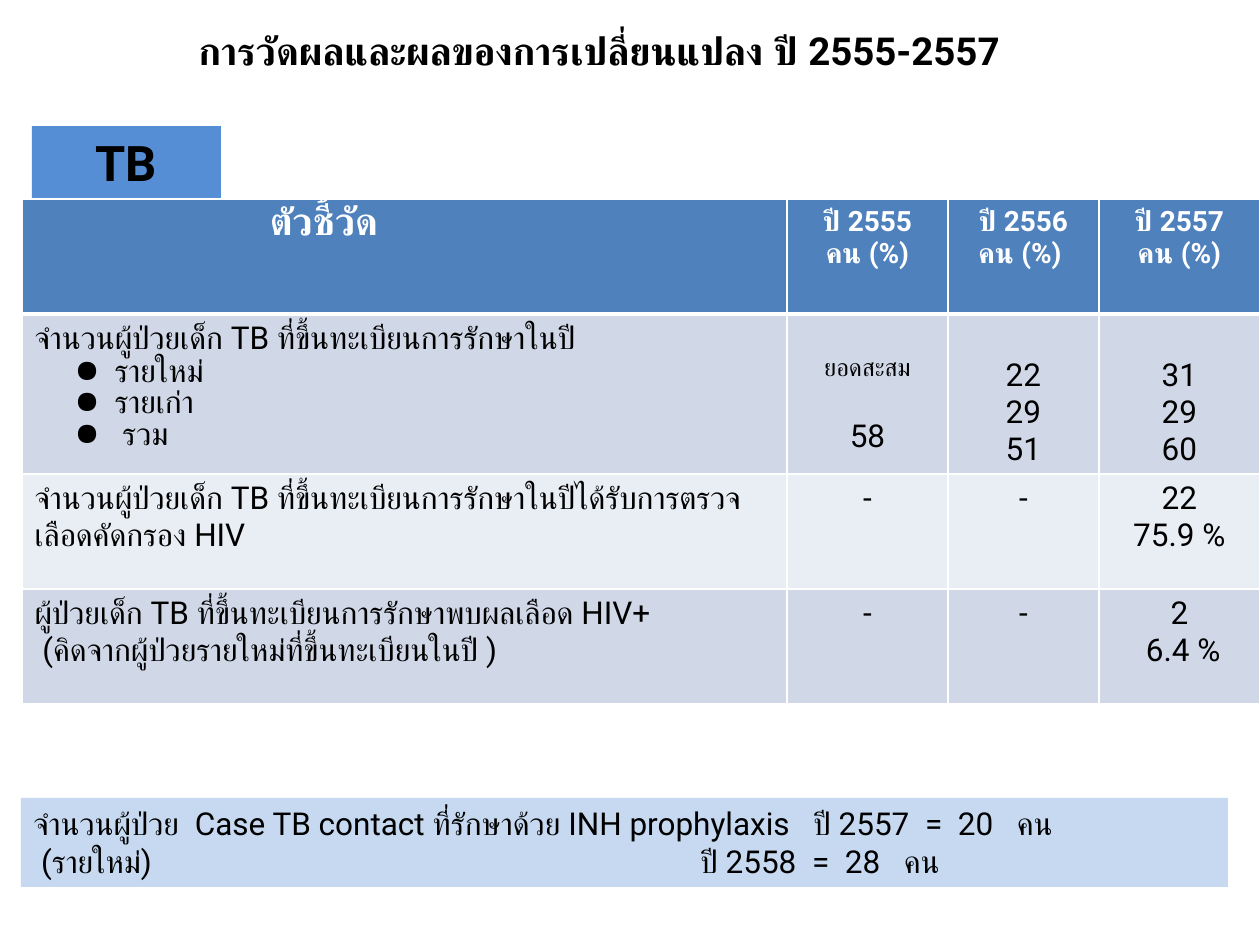
from lxml import etree
from pptx import Presentation
from pptx import util as u
from pptx.dml.color import RGBColor
from pptx.enum import shapes, text
from pptx.oxml import ns

SCALE = 914400 / 126
FONT = "Roboto"
COLORS = {
    "ink": "000000", "white": "FFFFFF", "header": "4F81BD",
    "odd": "D0D8E8", "even": "E9EDF4", "tag": "558ED5", "note": "C6D9F1",
}
COLUMNS = [765, 161, 151, 161]
ROWS = [115, 160, 115, 115]
LINE = 37
PAD = 6
CELLS = [
    ["ตัวชี้วัด", "ปี 2555\nคน (%)", "ปี 2556\nคน (%) ", "ปี 2557\nคน (%)"],
    ["จำนวนผู้ป่วยเด็ก TB ที่ขึ้นทะเบียนการรักษาในปี\nรายใหม่\nรายเก่า\n รวม",
     "ยอดสะสม\n58", "22\n29\n51", "31\n29\n60"],
    ["จำนวนผู้ป่วยเด็ก TB ที่ขึ้นทะเบียนการรักษาในปีได้รับการตรวจเลือดคัดกรอง HIV",
     "-", "-", "22\n75.9 %"],
    ["ผู้ป่วยเด็ก TB ที่ขึ้นทะเบียนการรักษาพบผลเลือด HIV+\n"
     " (คิดจากผู้ป่วยรายใหม่ที่ขึ้นทะเบียนในปี )", "-", "-", "2\n 6.4 %"],
]


def px(length):
    """Turn pixels into EMU."""
    return u.Emu(round(length * SCALE))


def color(name):
    """Look up a colour by name."""
    return RGBColor.from_string(COLORS[name])


def paint(item, name):
    """Give a shape or cell a solid fill."""
    item.fill.solid()
    item.fill.fore_color.rgb = color(name)


def write(frame, words, size, ink="ink", bold=False, align=text.PP_ALIGN.CENTER):
    """Set the text of a frame and format its paragraphs and runs."""
    frame.text = words
    frame.word_wrap = True
    for para in frame.paragraphs:
        para.alignment = align
        for span in para.runs:
            span.font.name = FONT
            span.font.size = u.Pt(size)
            span.font.bold = bold
            span.font.color.rgb = color(ink)


def add_title(page, words):
    """Fill and place the title placeholder."""
    box = page.shapes.title
    box.left, box.top, box.width, box.height = map(px, (32, 21, 1134, 84))
    write(box.text_frame, words, 22, bold=True)
    box.text_frame.vertical_anchor = text.MSO_ANCHOR.TOP


def add_box(page, place, fill, words, size, **style):
    """Add a filled rectangle with text."""
    box = page.shapes.add_shape(shapes.MSO_SHAPE.RECTANGLE, *map(px, place))
    box.shadow.inherit = False
    box.line.fill.background()
    paint(box, fill)
    write(box.text_frame, words, size, **style)
    box.text_frame.vertical_anchor = text.MSO_ANCHOR.TOP
    return box


def add_tab(para, position):
    """Set one left tab stop on a paragraph."""
    stops = etree.SubElement(para._p.get_or_add_pPr(), ns.qn("a:tabLst"))
    etree.SubElement(stops, ns.qn("a:tab"), pos=str(px(position)), algn="l")


def add_bullet(para):
    """Give a paragraph a round bullet with a hanging indent."""
    props = para._p.get_or_add_pPr()
    props.set("marL", str(px(80)))
    props.set("indent", str(px(-40)))
    etree.SubElement(props, ns.qn("a:buChar"), char="●")


def add_borders(cell, bottom):
    """Draw white lines around a cell."""
    props = cell._tc.get_or_add_tcPr()
    for side, points in (("L", 1), ("R", 1), ("T", 1), ("B", bottom)):
        line = etree.SubElement(props, ns.qn(f"a:ln{side}"), w=str(u.Pt(points)))
        fill = etree.SubElement(line, ns.qn("a:solidFill"))
        etree.SubElement(fill, ns.qn("a:srgbClr"), val=COLORS["white"])


def fill_cell(cell, words, row, column):
    """Write and format one table cell."""
    header = row == 0
    add_borders(cell, 3 if header else 1)
    paint(cell, "header" if header else "odd" if row % 2 else "even")
    size = 18 if not header else 16 if column else 22
    align = text.PP_ALIGN.CENTER if column else text.PP_ALIGN.LEFT
    write(cell.text_frame, words, size, "white" if header else "ink", header, align)


def add_indicators(page):
    """Add the table of yearly indicators."""
    place = map(px, (22, 199, sum(COLUMNS), sum(ROWS)))
    table = page.shapes.add_table(len(ROWS), len(COLUMNS), *place).table
    for column, width in zip(table.columns, COLUMNS):
        column.width = px(width)
    for row, height in zip(table.rows, ROWS):
        row.height = px(height)
    for row, line in enumerate(CELLS):
        for column, words in enumerate(line):
            fill_cell(table.cell(row, column), words, row, column)
    table.cell(0, 0).margin_left = px(248)
    for para in table.cell(1, 0).text_frame.paragraphs[1:]:
        add_bullet(para)
    for column in range(1, len(COLUMNS)):
        table.cell(1, column).margin_top = px(PAD + LINE)
    total, count = table.cell(1, 1).text_frame.paragraphs
    total.runs[0].font.size = u.Pt(14)
    count.space_before = px(LINE)


def main():
    """Build the slide and save it."""
    deck = Presentation()
    deck.slide_width, deck.slide_height = px(1260), px(945)
    page = deck.slides.add_slide(deck.slide_layouts[5])
    add_title(page, "การวัดผลและผลของการเปลี่ยนแปลง ปี 2555-2557")
    add_indicators(page)
    add_box(page, (32, 126, 189, 72), "tag", "TB", 28, bold=True)
    note = add_box(
        page, (21, 798, 1207, 89), "note",
        "จำนวนผู้ป่วย  Case TB contact ที่รักษาด้วย INH prophylaxis   ปี 2557  =  20   คน\n"
        " (รายใหม่)\tปี 2558  =  28   คน", 18, align=text.PP_ALIGN.LEFT)
    add_tab(note.text_frame.paragraphs[1], 667)
    deck.save("out.pptx")


if __name__ == "__main__":
    main()
